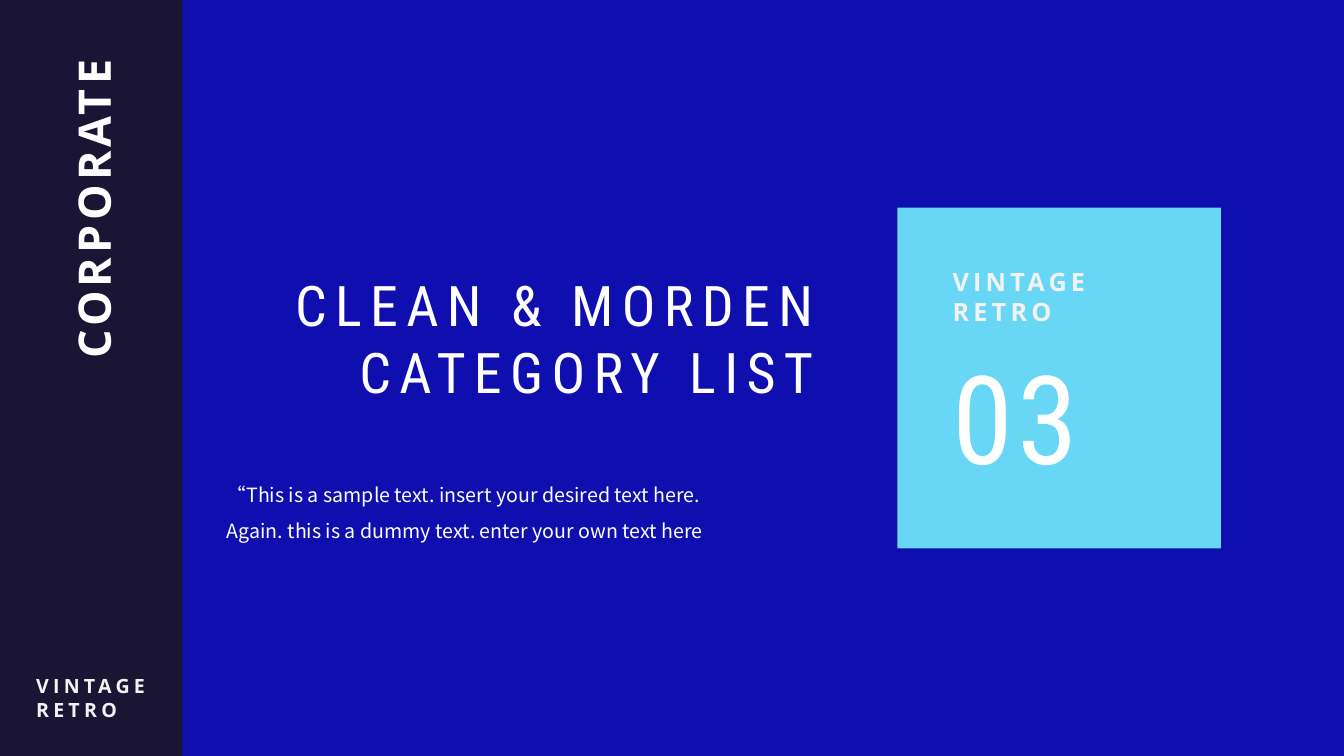
from pptx import Presentation
from pptx.dml.color import RGBColor
from pptx.enum.shapes import MSO_SHAPE
from pptx.enum.text import MSO_AUTO_SIZE, PP_ALIGN
from pptx.util import Inches, Pt

NAVY = RGBColor(0x1A, 0x14, 0x35)
BLUE = RGBColor(0x0F, 0x0F, 0xAF)
CYAN = RGBColor(0x68, 0xD7, 0xF5)
WHITE = RGBColor(0xFF, 0xFF, 0xFF)
PALE = RGBColor(0xF2, 0xF2, 0xF2)

LABEL_FONT = "Open Sans"
DISPLAY_FONT = "Roboto Condensed"
BODY_FONT = "Noto Sans CJK SC"

WIDTH, HEIGHT = 13.33, 7.5
SIDEBAR_WIDTH = 1.81
BRAND = ["VINTAGE", "RETRO"]


class SlideBuilder:
    def __init__(self, slide):
        self.slide = slide
        self.frame_format = {"word_wrap": True, "auto_size": MSO_AUTO_SIZE.SHAPE_TO_FIT_TEXT}

    def panel(self, left, top, width, height, color):
        shape = self.slide.shapes.add_shape(
            MSO_SHAPE.RECTANGLE, *map(Inches, (left, top, width, height)))
        shape.shadow.inherit = False
        shape.fill.solid()
        shape.fill.fore_color.rgb = color
        shape.line.fill.background()

    def text(self, position, lines, font, size, color=WHITE, bold=False,
             tracking=0, rotation=0, **paragraph_format):
        """Add one paragraph per line; tracking is letter spacing in points."""
        box = self.slide.shapes.add_textbox(*map(Inches, position))
        box.rotation = rotation
        frame = box.text_frame
        for name, value in self.frame_format.items():
            setattr(frame, name, value)
        font_format = {"name": font, "size": Pt(size), "bold": bold}
        for index, line in enumerate(lines):
            paragraph = frame.add_paragraph() if index else frame.paragraphs[0]
            for name, value in paragraph_format.items():
                setattr(paragraph, name, value)
            run = paragraph.add_run()
            run.text = line
            for name, value in font_format.items():
                setattr(run.font, name, value)
            run.font.color.rgb = color
            if tracking:
                run.font._element.set("spc", str(tracking * 100))

    def label(self, position, lines, size, color=PALE, **options):
        self.text(position, lines, LABEL_FONT, size, color, bold=True, tracking=3, **options)


def main():
    presentation = Presentation()
    presentation.slide_width = Inches(WIDTH)
    presentation.slide_height = Inches(HEIGHT)
    builder = SlideBuilder(presentation.slides.add_slide(presentation.slide_layouts[6]))

    builder.panel(0, 0, WIDTH, HEIGHT, NAVY)
    builder.panel(SIDEBAR_WIDTH, 0, WIDTH - SIDEBAR_WIDTH, HEIGHT, BLUE)

    builder.panel(8.9, 2.06, 3.21, 3.38, CYAN)
    builder.label((9.35, 2.59, 1.99, 0.71), BRAND, 18)
    builder.text((9.35, 3.34, 1.99, 1.58), ["03"], DISPLAY_FONT, 88, tracking=3)

    builder.text((2.57, 2.63, 5.6, 1.45), ["CLEAN & MORDEN", "CATEGORY LIST"],
                 DISPLAY_FONT, 40, tracking=6, alignment=PP_ALIGN.RIGHT)
    builder.text((2.15, 4.63, 6.02, 0.77),
                 ["“This is a sample text. insert your desired text here.",
                  "Again. this is a dummy text. enter your own text here"],
                 BODY_FONT, 14, line_spacing=1.5)

    builder.label((0.26, 6.64, 1.41, 0.57), BRAND, 14)
    builder.label((-1.47, 2.57, 4.87, 0.72), ["CORPORATE"], 32, WHITE,
                  rotation=270, alignment=PP_ALIGN.RIGHT)

    presentation.save("out.pptx")


if __name__ == "__main__":
    main()
